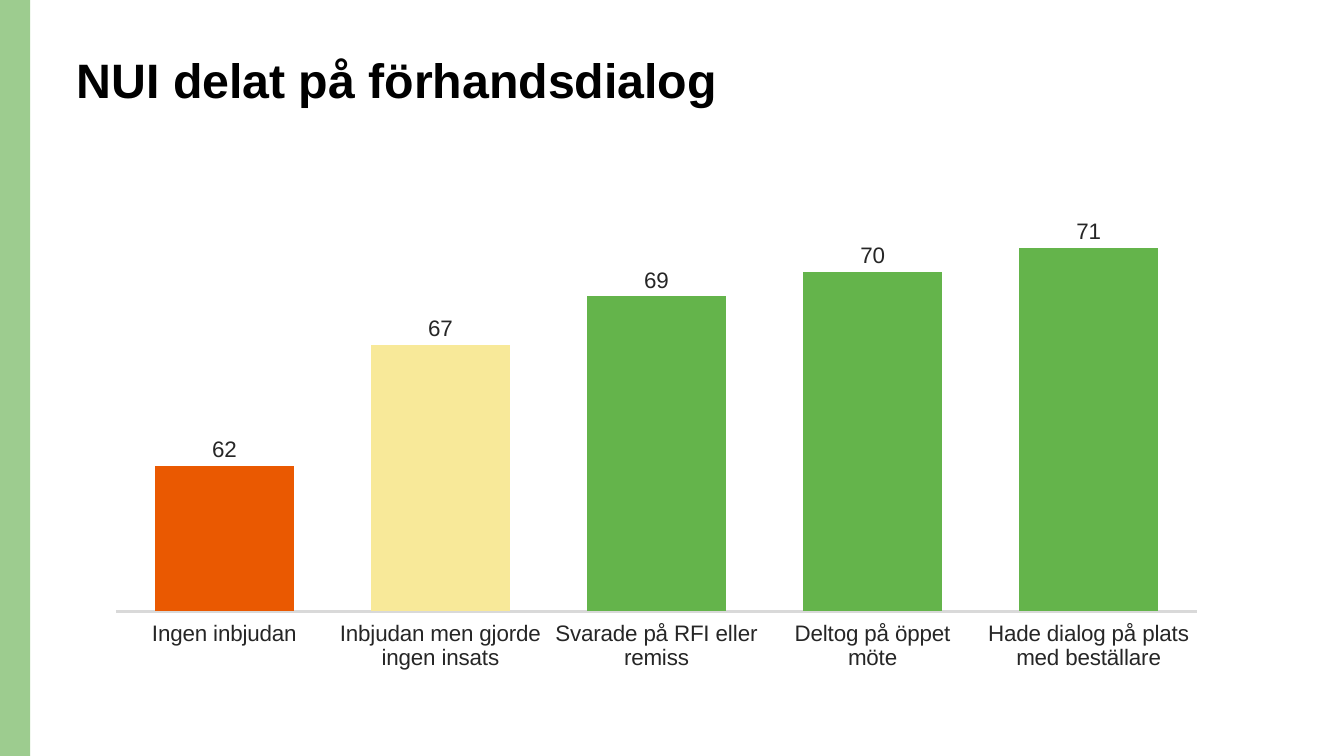
from dataclasses import dataclass

from lxml.etree import SubElement
from pptx import Presentation
from pptx.chart.data import CategoryChartData
from pptx.dml.color import RGBColor
from pptx.enum.chart import XL_CHART_TYPE, XL_LABEL_POSITION, XL_TICK_LABEL_POSITION, XL_TICK_MARK
from pptx.enum.shapes import MSO_SHAPE
from pptx.enum.text import MSO_ANCHOR, MSO_AUTO_SIZE, PP_ALIGN
from pptx.oxml.ns import qn
from pptx.util import Cm, Pt


@dataclass(frozen=True)
class Theme:
    font: str = "Arial"
    title_size: float = 34.5
    chart_size: float = 16
    title: str = "000000"
    chart_text: str = "262626"
    baseline: str = "D9D9D9"
    side_band: str = "9DCC8F"
    no_invitation: str = "EA5901"
    no_effort: str = "F8E999"
    dialogue: str = "64B44B"


THEME = Theme()

INDEX_BY_DIALOGUE = [
    ("Ingen inbjudan", 62, THEME.no_invitation),
    ("Inbjudan men gjorde ingen insats", 67, THEME.no_effort),
    ("Svarade på RFI eller remiss", 69, THEME.dialogue),
    ("Deltog på öppet möte", 70, THEME.dialogue),
    ("Hade dialog på plats med beställare", 71, THEME.dialogue),
]


def apply(target, formats):
    for attribute, value in formats.items():
        setattr(target, attribute, value)


def style_font(font, size, color, bold=False):
    apply(font, {"name": THEME.font, "size": Pt(size), "bold": bold})
    font.color.rgb = RGBColor.from_string(color)


def paint(fill, color):
    fill.solid()
    fill.fore_color.rgb = RGBColor.from_string(color)


def add_side_band(slide, box):
    band = slide.shapes.add_shape(MSO_SHAPE.RECTANGLE, *box)
    band.shadow.inherit = False
    paint(band.fill, THEME.side_band)
    band.line.fill.background()


def fill_title(slide, box, wording):
    heading = slide.shapes.title
    apply(heading, dict(zip(("left", "top", "width", "height"), box)))
    apply(heading.text_frame, {
        "text": wording,
        "word_wrap": True,
        "auto_size": MSO_AUTO_SIZE.NONE,
        "vertical_anchor": MSO_ANCHOR.TOP,
    })
    line = heading.text_frame.paragraphs[0]
    apply(line, {"alignment": PP_ALIGN.LEFT, "line_spacing": 0.9})
    style_font(line.font, THEME.title_size, THEME.title, bold=True)


def place_plot(chart, **fractions):
    """Fix the inner plot area as fractions of the chart's own box."""
    plot_area = chart.plots[0]._element.getparent()
    layout = plot_area.find(qn("c:layout"))
    if layout is None:
        layout = SubElement(plot_area, qn("c:layout"))
        plot_area.insert(0, layout)
    manual = SubElement(layout, qn("c:manualLayout"))
    settings = {"layoutTarget": "inner", "xMode": "edge", "yMode": "edge", **fractions}
    for tag, value in settings.items():
        SubElement(manual, qn(f"c:{tag}")).set("val", str(value))


def add_index_chart(slide, box, rows):
    categories, scores, colors = zip(*rows)
    index_data = CategoryChartData(number_format="0")
    index_data.categories = categories
    index_data.add_series("Series 1", scores)
    chart = slide.shapes.add_chart(XL_CHART_TYPE.COLUMN_CLUSTERED, *box, index_data).chart
    apply(chart, {"has_title": False, "has_legend": False})
    style_font(chart.font, THEME.chart_size, THEME.chart_text)
    place_plot(chart, x=0.043, y=0.043, w=0.937, h=0.833)

    # Axes
    apply(chart.value_axis, {
        "visible": False,
        "has_major_gridlines": False,
        "minimum_scale": 56,
        "maximum_scale": 74,
    })
    steps = chart.category_axis
    apply(steps, {
        "major_tick_mark": XL_TICK_MARK.NONE,
        "minor_tick_mark": XL_TICK_MARK.NONE,
        "tick_label_position": XL_TICK_LABEL_POSITION.LOW,
    })
    style_font(steps.tick_labels.font, THEME.chart_size, THEME.chart_text)
    steps.format.line.width = Pt(2.5)
    steps.format.line.color.rgb = RGBColor.from_string(THEME.baseline)

    # Columns
    columns = chart.plots[0]
    apply(columns, {"gap_width": 55, "vary_by_categories": False})
    index_series = columns.series[0]
    paint(index_series.format.fill, THEME.dialogue)
    for position, color in enumerate(colors):
        if color != THEME.dialogue:
            paint(index_series.points[position].format.fill, color)

    # Scores above the columns
    score_labels = index_series.data_labels
    apply(score_labels, {
        "show_value": True,
        "position": XL_LABEL_POSITION.OUTSIDE_END,
        "number_format": "0",
        "number_format_is_linked": False,
    })
    style_font(score_labels.font, THEME.chart_size, THEME.chart_text)


def build_chart_slide(deck, box):
    left, top, width, height = box
    slide = deck.slides.add_slide(deck.slide_layouts[5])
    margin = left + Cm(1.68)
    add_side_band(slide, (left, top, Cm(0.76), height))
    fill_title(slide, (margin, top + Cm(1.3), width - Cm(3.51), Cm(2.51)),
               "NUI delat på förhandsdialog")
    add_index_chart(slide, (margin, top + Cm(3.84), width - Cm(4.81), Cm(13.21)),
                    INDEX_BY_DIALOGUE)


def main():
    deck = Presentation()
    apply(deck, {"slide_width": Cm(33.87), "slide_height": Cm(19.05)})
    build_chart_slide(deck, (0, 0, deck.slide_width, deck.slide_height))
    deck.save("out.pptx")


if __name__ == "__main__":
    main()
